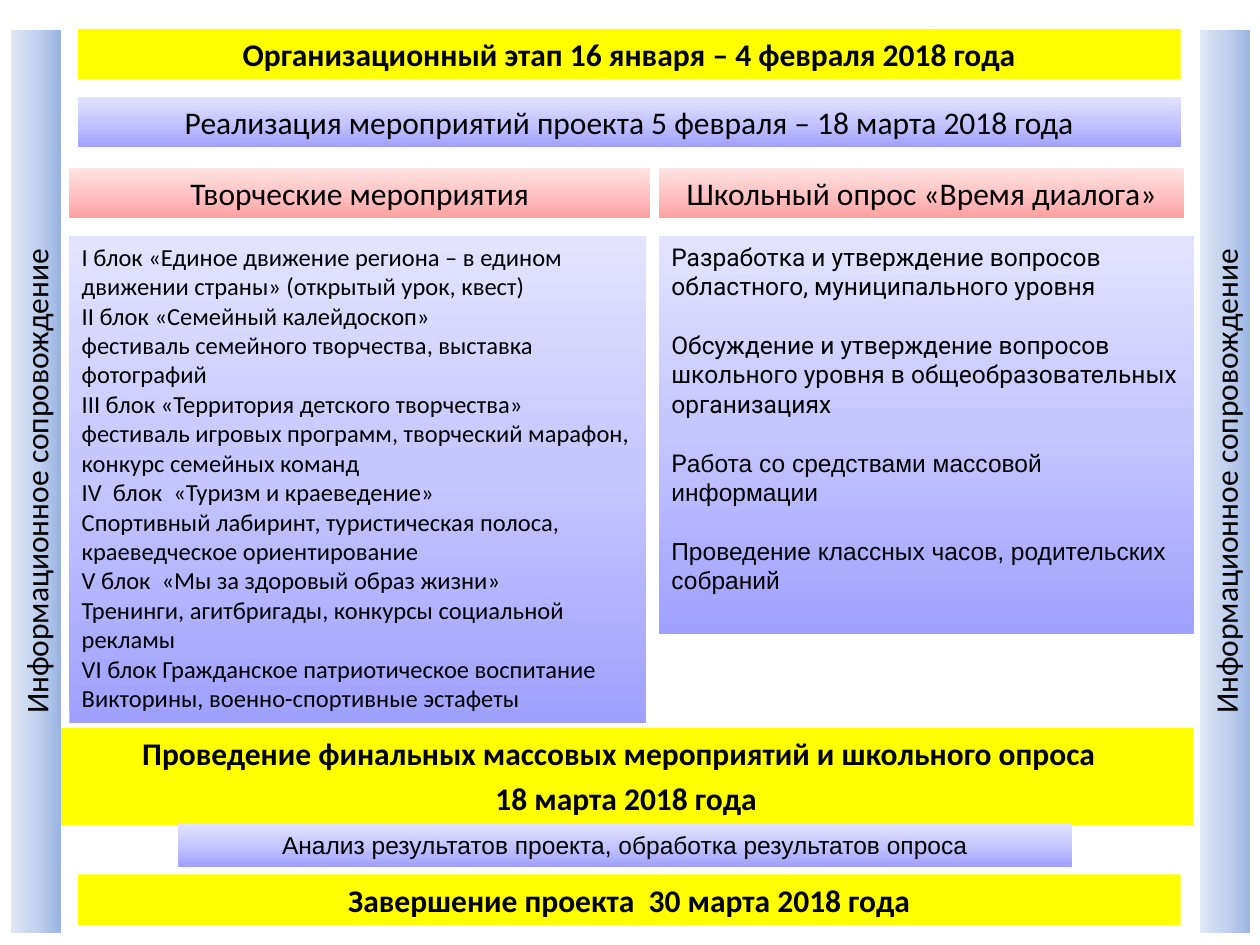
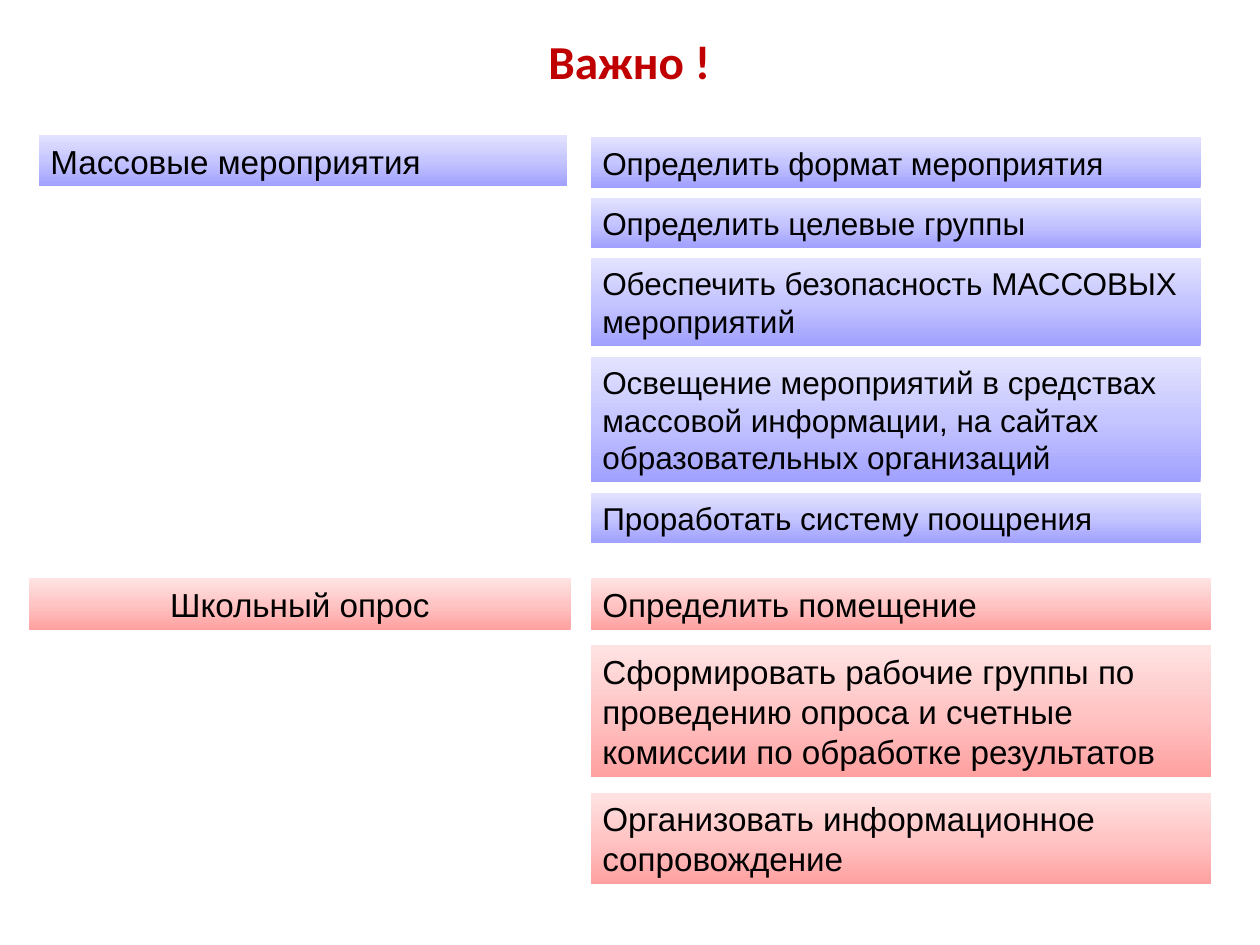
"""Builds two slides: the project timetable and the checklist of important points."""
from copy import deepcopy
from dataclasses import dataclass, field

from pptx import Presentation
from pptx.dml.color import RGBColor
from pptx.enum.shapes import MSO_SHAPE
from pptx.enum.text import MSO_ANCHOR, PP_ALIGN
from pptx.util import Emu, Pt

RECTANGLE = MSO_SHAPE.RECTANGLE
TOP, MIDDLE = MSO_ANCHOR.TOP, MSO_ANCHOR.MIDDLE
LEFT, CENTER = PP_ALIGN.LEFT, PP_ALIGN.CENTER
EMU_PER_PX = 9144
TITLE_ONLY, BLANK = 5, 6


@dataclass(frozen=True)
class Theme:
    """Colours, fonts and type sizes of the deck."""
    blue: tuple = ("A0A0FF", "C5C5FF", "E3E3FF")
    pink: tuple = ("FFA0A0", "FFC5C5", "FFE3E3")
    steel: tuple = ("9AB5E4", "C2D1ED", "E1E8F5")
    yellow: str = "FFFF00"
    ink: str = "000000"
    title: str = "C00000"
    heading_font: str = "Calibri"
    plain_font: str = "Arial"
    poll_font: str = "Roboto"
    title_size: int = 27
    large: int = 19
    normal: int = 18
    small: int = 14
    line_ratio: float = 1.2
    heading: dict = field(default_factory=lambda: {"size": 18, "align": CENTER, "gap": 3.6})


def px(length):
    """Turn px into EMU."""
    return Emu(length * EMU_PER_PX)


def set_all(target, values):
    """Set every attribute named in values."""
    for name, value in values.items():
        setattr(target, name, value)


class SlideWriter:
    """Holds the theme and the current slide, and draws elements on it."""

    def __init__(self, theme):
        self.theme = theme
        self.deck = Presentation()
        set_all(self.deck, {"slide_width": px(1000), "slide_height": px(750)})
        self.page = None
        self.inset = 10

    def new_page(self, layout, inset):
        """Start a slide with the given side inset for its boxes."""
        self.page = self.deck.slides.add_slide(self.deck.slide_layouts[layout])
        self.inset = inset

    def span(self, para, text, font, size, colour, bold):
        """Add one formatted piece of text."""
        run = para.add_run()
        run.text = text
        set_all(run.font, {"name": font, "size": Pt(size), "bold": bold})
        run.font.color.rgb = RGBColor.from_string(colour)

    def title(self, text, frame):
        """Fill and place the title placeholder."""
        theme, box = self.theme, self.page.shapes.title
        set_all(box, dict(zip(("left", "top", "width", "height"), map(px, frame))))
        set_all(box.text_frame, {"vertical_anchor": MIDDLE, "word_wrap": True})
        para = box.text_frame.paragraphs[0]
        para.alignment = CENTER
        self.span(para, text, theme.heading_font, theme.title_size, theme.title, True)

    def paint(self, box, colours):
        """Fill a box with one colour or a three-stop upward gradient."""
        if isinstance(colours, str):
            box.fill.solid()
            box.fill.fore_color.rgb = RGBColor.from_string(colours)
            return
        box.fill.gradient()
        box.fill.gradient_angle = 90
        first = box.fill.gradient_stops[0]._gs
        first.addnext(deepcopy(first))
        for index, (stop, colour) in enumerate(zip(box.fill.gradient_stops, colours)):
            stop.position = index / 2
            stop.color.rgb = RGBColor.from_string(colour)

    def box(self, frame, colours, paragraphs, size, font=None, align=LEFT,
            gap=0, bold=False, rotation=0):
        """Draw a filled box whose paragraphs are strings or lists of (text, font)."""
        box = self.page.shapes.add_shape(RECTANGLE, *map(px, frame))
        box.rotation = rotation
        box.shadow.inherit = False
        box.line.fill.background()
        self.paint(box, colours)
        side, edge = px(self.inset), px(5)
        set_all(box.text_frame, {
            "word_wrap": True, "vertical_anchor": TOP, "margin_left": side,
            "margin_right": side, "margin_top": edge, "margin_bottom": edge})
        for index, content in enumerate(paragraphs):
            para = box.text_frame.add_paragraph() if index else box.text_frame.paragraphs[0]
            set_all(para, {
                "alignment": align, "space_before": Pt(gap if index else 0),
                "line_spacing": Pt(size * self.theme.line_ratio)})
            spans = [(content, font)] if isinstance(content, str) else content
            for text, face in spans:
                self.span(para, text, face or self.theme.heading_font, size,
                          self.theme.ink, bold)

    def heading(self, frame, colours, *lines, **options):
        """Draw a centred heading band."""
        self.box(frame, colours, lines, **self.theme.heading, **options)

    def stack(self, left, top, width, gap, line_height, padding, items, **options):
        """Draw boxes one under another, each as tall as its number of lines."""
        for lines, text in items:
            height = padding + line_height * lines
            self.box((left, top, width, height), paragraphs=[text], **options)
            top += height + gap


CREATIVE_EVENTS = [
    "I блок «Единое движение региона – в едином движении страны» (открытый урок, квест)",
    "II блок «Семейный калейдоскоп»",
    "фестиваль семейного творчества, выставка фотографий",
    "III блок «Территория детского творчества»",
    "фестиваль игровых программ, творческий марафон, конкурс семейных команд",
    "IV  блок  «Туризм и краеведение»",
    "Спортивный лабиринт, туристическая полоса, краеведческое ориентирование",
    "V блок  «Мы за здоровый образ жизни»",
    "Тренинги, агитбригады, конкурсы социальной рекламы",
    "VI блок Гражданское патриотическое воспитание",
    "Викторины, военно-спортивные эстафеты",
]
EVENT_TASKS = [
    (1, "Определить формат мероприятия"),
    (1, "Определить целевые группы"),
    (2, "Обеспечить безопасность МАССОВЫХ мероприятий"),
    (3, "Освещение мероприятий в средствах массовой информации, "
        "на сайтах образовательных организаций"),
    (1, "Проработать систему поощрения"),
]
POLL_TASKS = [
    (1, "Определить помещение"),
    (3, "Сформировать рабочие группы по проведению опроса "
        "и счетные комиссии по обработке результатов"),
    (2, "Организовать информационное сопровождение"),
]


def timetable(writer):
    """Draw the stages of the project."""
    theme = writer.theme
    poll, plain = theme.poll_font, theme.plain_font
    poll_steps = [
        [("Разработка и утверждение вопросов областного, муниципального уровня", poll)],
        [("Обсуждение и утверждение вопросов школьного уровня "
          "в общеобразовательных организациях", poll)],
        [("Р", poll), ("абота со средствами массовой информации", plain)],
        [("Проведение классных часов, родительских собраний", plain)],
    ]
    writer.new_page(BLANK, inset=10)
    writer.heading((55, 133, 461, 40), theme.pink, "Творческие мероприятия")
    writer.box((55, 187, 458, 387), theme.blue, CREATIVE_EVENTS, theme.small)
    writer.heading((62, 694, 875, 40), theme.yellow,
                   "Завершение проекта  30 марта 2018 года", bold=True)
    writer.heading((62, 23, 875, 40), theme.yellow,
                   "Организационный этап 16 января – 4 февраля 2018 года", bold=True)
    writer.heading((47, 578, 900, 77), theme.yellow,
                   "Проведение финальных массовых мероприятий и школьного опроса  ",
                   "18 марта 2018 года", bold=True)
    writer.heading((523, 133, 417, 40), theme.pink, "Школьный опрос «Время диалога»")
    writer.box((523, 187, 425, 316), theme.blue, poll_steps, theme.small,
               gap=theme.small * theme.line_ratio)
    writer.box((141, 654, 710, 34), theme.blue,
               ["Анализ результатов проекта, обработка результатов опроса"],
               theme.small, font=plain, align=CENTER)
    writer.heading((62, 77, 875, 40), theme.blue,
                   "Реализация мероприятий проекта 5 февраля – 18 марта 2018 года")
    for left in (614, -330):
        writer.heading((left, 362, 717, 40), theme.steel,
                       "Информационное сопровождение", rotation=270)


def checklist(writer):
    """Draw the tasks for the events and for the poll."""
    theme = writer.theme
    plain = theme.plain_font
    writer.new_page(TITLE_ONLY, inset=9)
    writer.title("Важно !", (23, 23, 953, 50))
    writer.box((31, 107, 419, 41), theme.blue, ["Массовые мероприятия"],
               theme.large, font=plain)
    writer.stack(469, 109, 484, 8, 30, 10, EVENT_TASKS,
                 colours=theme.blue, size=theme.normal, font=plain)
    writer.box((23, 459, 430, 41), theme.pink, ["Школьный опрос"],
               theme.large, font=plain, align=CENTER)
    writer.stack(469, 459, 492, 12, 32, 9, POLL_TASKS,
                 colours=theme.pink, size=theme.large, font=plain)


def main():
    """Build and save the deck."""
    writer = SlideWriter(Theme())
    timetable(writer)
    checklist(writer)
    writer.deck.save("out.pptx")


if __name__ == "__main__":
    main()
